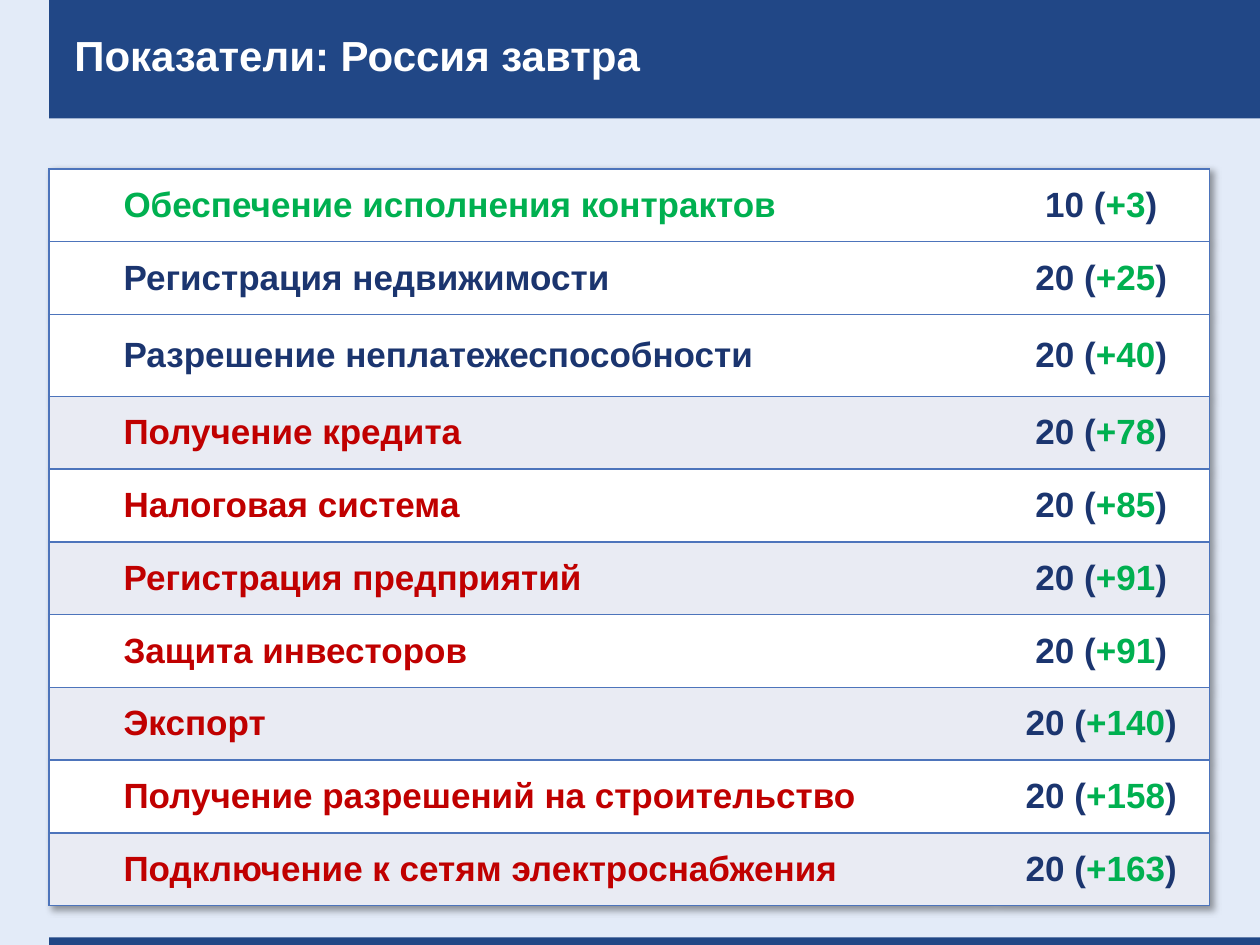
from dataclasses import dataclass

from lxml.etree import SubElement
from pptx import Presentation
from pptx.dml.color import RGBColor
from pptx.enum.shapes import MSO_SHAPE
from pptx.enum.text import MSO_ANCHOR, MSO_AUTO_SIZE, PP_ALIGN
from pptx.oxml.ns import qn
from pptx.util import Inches, Pt


@dataclass(frozen=True)
class Theme:
    font: str = "Arial"
    title_size: int = 24
    table_size: int = 20
    background: str = "E3EBF8"
    bar: str = "214786"
    border: str = "4D74BB"
    navy: str = "1B356F"
    green: str = "00B050"
    red: str = "C00000"
    white: str = "FFFFFF"
    band: str = "E9EBF3"


THEME = Theme()
LEFT = 0.39
TABLE_WIDTH = 9.21
TABLE_HEIGHT = 5.85
VALUE_WIDTH = 1.72
TALL_ROW, TALL_HEIGHT = 2, 0.65
BANDED_ROWS = (3, 5, 7, 9)

# Label, label colour, target rank, improvement
INDICATORS = [
    ("Обеспечение исполнения контрактов", THEME.green, 10, 3),
    ("Регистрация недвижимости", THEME.navy, 20, 25),
    ("Разрешение неплатежеспособности", THEME.navy, 20, 40),
    ("Получение кредита", THEME.red, 20, 78),
    ("Налоговая система", THEME.red, 20, 85),
    ("Регистрация предприятий", THEME.red, 20, 91),
    ("Защита инвесторов", THEME.red, 20, 91),
    ("Экспорт", THEME.red, 20, 140),
    ("Получение разрешений на строительство", THEME.red, 20, 158),
    ("Подключение к сетям электроснабжения", THEME.red, 20, 163),
]


def rgb(value):
    return RGBColor.from_string(value)


def add_shadow(parent, blur, distance, angle, opacity):
    """Append an effect list with an outer black shadow; angle is in degrees."""
    effects = SubElement(parent, qn("a:effectLst"))
    shadow = SubElement(effects, qn("a:outerShdw"), blurRad=str(Pt(blur)),
                        dist=str(Pt(distance)), dir=str(angle * 60000),
                        algn="tl", rotWithShape="0")
    color = SubElement(shadow, qn("a:srgbClr"), val="000000")
    SubElement(color, qn("a:alpha"), val=str(opacity * 1000))
    return effects


def format_font(font, size):
    font.name = THEME.font
    font.size = Pt(size)
    font.bold = True


def add_bar(slide, top, height):
    bar = slide.shapes.add_shape(MSO_SHAPE.RECTANGLE, Inches(LEFT), Inches(top),
                                 Inches(10 - LEFT), Inches(height))
    bar.shadow.inherit = False
    bar.fill.solid()
    bar.fill.fore_color.rgb = rgb(THEME.bar)
    bar.line.fill.background()


def set_title(slide, text):
    title = slide.shapes.title
    title.left, title.top = Inches(LEFT), 0
    title.width, title.height = Inches(TABLE_WIDTH), Inches(0.94)
    frame = title.text_frame
    frame.auto_size = MSO_AUTO_SIZE.NONE
    frame.word_wrap = True
    frame.vertical_anchor = MSO_ANCHOR.MIDDLE
    frame.margin_left = Inches(0.2)
    frame.margin_right = frame.margin_top = frame.margin_bottom = 0
    paragraph = frame.paragraphs[0]
    paragraph.alignment = PP_ALIGN.LEFT
    paragraph.line_spacing = 0.8
    format_font(paragraph.font, THEME.title_size)
    run = paragraph.add_run()
    run.text = text
    run.font.color.rgb = rgb(THEME.white)
    add_shadow(run.font._element, 3, 3, 45, 100)
    # The title stands in front of the header bar.
    slide.shapes._spTree.append(title._element)


def set_borders(cell, hidden_side):
    """Draw the outer cell borders and hide the one between the columns."""
    properties = cell._tc.get_or_add_tcPr()
    for side in ("lnL", "lnR", "lnT", "lnB"):
        line = SubElement(properties, qn(f"a:{side}"), w=str(Pt(1)))
        if side == hidden_side:
            SubElement(line, qn("a:noFill"))
        else:
            fill = SubElement(line, qn("a:solidFill"))
            SubElement(fill, qn("a:srgbClr"), val=THEME.border)


def fill_cell(cell, parts, background, hidden_side, alignment, indent=0):
    """Write (text, colour) parts into one formatted table cell."""
    set_borders(cell, hidden_side)
    cell.fill.solid()
    cell.fill.fore_color.rgb = rgb(background)
    cell.vertical_anchor = MSO_ANCHOR.MIDDLE
    cell.margin_left = cell.margin_right = cell.margin_top = cell.margin_bottom = 0
    paragraph = cell.text_frame.paragraphs[0]
    paragraph.alignment = alignment
    paragraph._p.get_or_add_pPr().set("marL", str(Inches(indent)))
    format_font(paragraph.font, THEME.table_size)
    for text, color in parts:
        run = paragraph.add_run()
        run.text = text
        run.font.color.rgb = rgb(color)


def add_indicator_table(slide):
    table = slide.shapes.add_table(
        len(INDICATORS), 2, Inches(LEFT), Inches(1.34),
        Inches(TABLE_WIDTH), Inches(TABLE_HEIGHT)).table
    table.first_row = table.horz_banding = False
    properties = table._tbl.tblPr
    properties.insert(0, add_shadow(properties, 4, 3, 45, 40))
    table.columns[0].width = Inches(TABLE_WIDTH - VALUE_WIDTH)
    table.columns[1].width = Inches(VALUE_WIDTH)
    row_height = (TABLE_HEIGHT - TALL_HEIGHT) / (len(INDICATORS) - 1)
    for index, (label, color, rank, gain) in enumerate(INDICATORS):
        table.rows[index].height = Inches(TALL_HEIGHT if index == TALL_ROW else row_height)
        background = THEME.band if index in BANDED_ROWS else THEME.white
        fill_cell(table.cell(index, 0), [(label, color)], background,
                  "lnR", PP_ALIGN.LEFT, indent=0.59)
        value = [(f"{rank} (", THEME.navy), (f"+{gain}", THEME.green), (")", THEME.navy)]
        fill_cell(table.cell(index, 1), value, background, "lnL", PP_ALIGN.CENTER)


def main():
    presentation = Presentation()
    presentation.slide_width, presentation.slide_height = Inches(10), Inches(7.5)
    slide = presentation.slides.add_slide(presentation.slide_layouts[5])
    slide.background.fill.solid()
    slide.background.fill.fore_color.rgb = rgb(THEME.background)
    add_bar(slide, 0, 0.94)
    add_bar(slide, 7.44, 0.06)
    add_indicator_table(slide)
    set_title(slide, "Показатели: Россия завтра")
    presentation.save("out.pptx")


if __name__ == "__main__":
    main()
